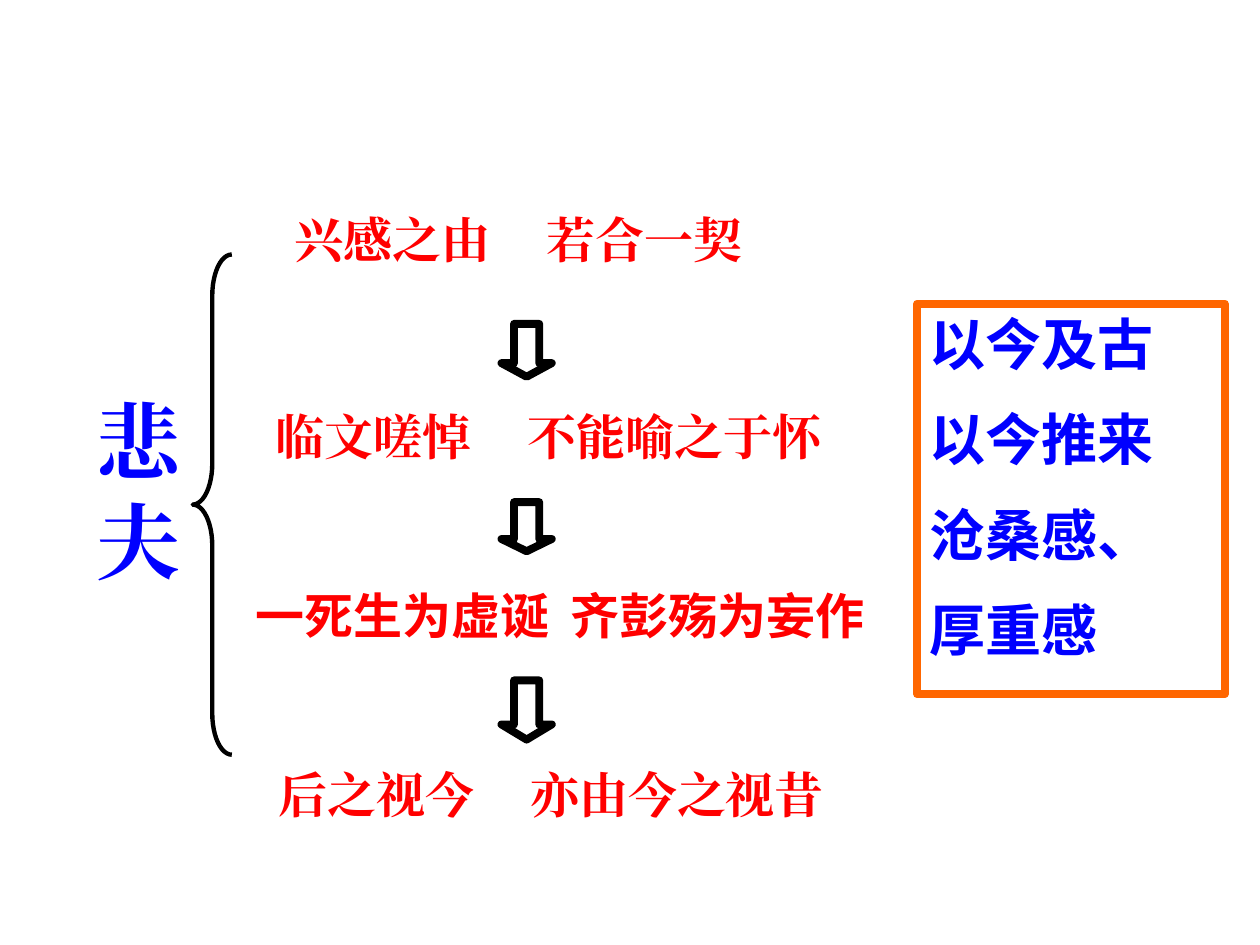
from lxml.etree import SubElement
from pptx import Presentation
from pptx.dml.color import RGBColor
from pptx.enum.shapes import MSO_SHAPE
from pptx.enum.text import MSO_ANCHOR, MSO_AUTO_SIZE, PP_ALIGN
from pptx.oxml.ns import qn
from pptx.util import Inches, Pt

COLORS = {"blue": "0000FF", "red": "FF0000", "orange": "FF6600",
          "black": "000000", "white": "FFFFFF"}
SERIF, SANS, CJK = "Times New Roman", "Arial", "Noto Sans CJK SC"

# Content: steps are (first phrase, second phrase, left, width, tab stop, font)
HEADING = "悲夫"
STEPS = [
    ("兴感之由", "若合一契", 2.24, 4.92, 2.0, SERIF),
    ("临文嗟悼", "不能喻之于怀", 2.09, 4.85, 2.0, SERIF),
    ("一死生为虚诞", "齐彭殇为妄作", 1.93, 5.57, 2.5, CJK),
    ("后之视今", "亦由今之视昔", 2.11, 4.62, 2.0, SERIF),
]
ARROWS = [(0.42, 0.27), (0.39, 0.25), (0.47, 0.3)]  # height, head share
SUMMARY = ["以今及古", "以今推来", "沧桑感、", "厚重感"]

# Rows of the chain
STEP_TOPS = [1.61] + [3.18 + 1.42 * row for row in range(3)]
ARROW_TOPS = [2.57 + 1.415 * row for row in range(3)]
ARROW_LEFT, ARROW_WIDTH = 3.98, 0.4


def color(name):
    return RGBColor.from_string(COLORS[name])


def write(shape, lines, size, font_name, color_name, tab_stop=None):
    frame = shape.text_frame
    frame.word_wrap = True
    frame.auto_size = MSO_AUTO_SIZE.SHAPE_TO_FIT_TEXT
    frame.vertical_anchor = MSO_ANCHOR.TOP
    for index, line in enumerate(lines):
        paragraph = frame.add_paragraph() if index else frame.paragraphs[0]
        paragraph.alignment = PP_ALIGN.LEFT
        properties = paragraph._p.get_or_add_pPr()
        spacing = SubElement(properties, qn("a:spcBef"))
        SubElement(spacing, qn("a:spcPct"), val="50000")
        if tab_stop:
            tabs = SubElement(properties, qn("a:tabLst"))
            SubElement(tabs, qn("a:tab"), pos=str(Inches(tab_stop)), algn="l")
        run = paragraph.add_run()
        run.text = line
        run.font.size, run.font.bold = Pt(size), True
        run.font.color.rgb = color(color_name)
        run.font.name = font_name
        SubElement(run._r.get_or_add_rPr(), qn("a:ea"), typeface=font_name)


def add_text(slide, box, *style):
    write(slide.shapes.add_textbox(*map(Inches, box)), *style)


def add_outline(slide, kind, box, line_color, line_width, adjustments=(), fill=None):
    shape = slide.shapes.add_shape(kind, *map(Inches, box))
    shape.shadow.inherit = False
    if fill:
        shape.fill.solid()
        shape.fill.fore_color.rgb = color(fill)
    else:
        shape.fill.background()
    shape.line.color.rgb = color(line_color)
    shape.line.width = Pt(line_width)
    for index, value in enumerate(adjustments):
        shape.adjustments[index] = value
    return shape


def main():
    presentation = Presentation()
    presentation.slide_width, presentation.slide_height = Inches(10), Inches(7.5)
    slide = presentation.slides.add_slide(presentation.slide_layouts[6])

    # Heading and brace
    add_text(slide, (0.67, 3.04, 1.42, 1.7), [HEADING], 48, SERIF, "blue")
    add_outline(slide, MSO_SHAPE.LEFT_BRACE, (1.53, 2.02, 0.31, 3.97),
                "black", 2.5, (1.05, 0.5))

    # Chain of steps, the two phrases parted by a tab
    for top, (first, second, left, width, tab_stop, font) in zip(STEP_TOPS, STEPS):
        add_text(slide, (left, top, width, 0.57), [f"{first}\t{second}"],
                 28, font, "red", tab_stop)

    # Arrows between the steps
    for top, (height, head) in zip(ARROW_TOPS, ARROWS):
        add_outline(slide, MSO_SHAPE.DOWN_ARROW, (ARROW_LEFT, top, ARROW_WIDTH, height),
                    "black", 4.5, (0.5, head), "white")

    # Framed summary
    frame = add_outline(slide, MSO_SHAPE.RECTANGLE, (7.28, 2.41, 2.44, 3.1), "orange", 4.5)
    write(frame, SUMMARY, 32, SANS, "blue")

    presentation.save("out.pptx")


if __name__ == "__main__":
    main()
